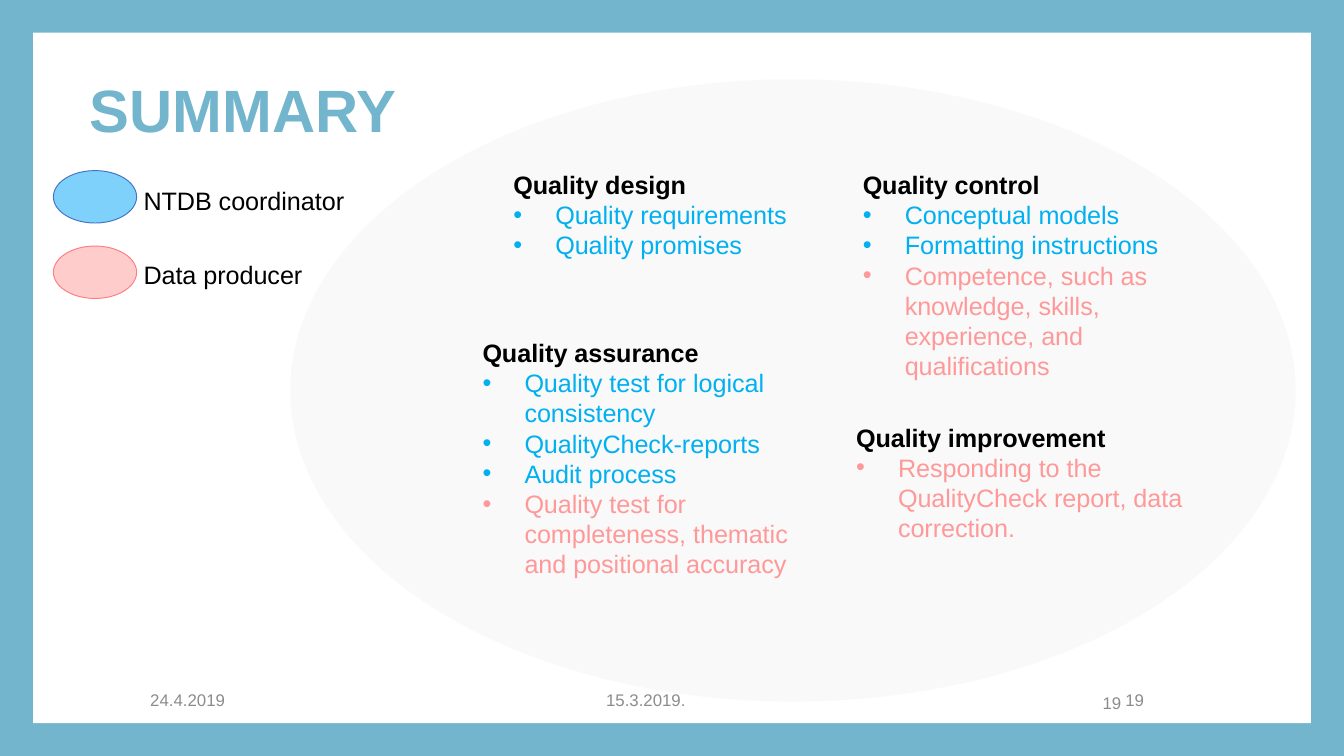
from dataclasses import dataclass
from typing import Any

import pptx
import pptx.dml.color
import pptx.enum.shapes
import pptx.enum.text
import pptx.oxml.ns
import pptx.util
from lxml import etree

Pt = pptx.util.Pt
ALIGN = pptx.enum.text.PP_ALIGN
ANCHOR = pptx.enum.text.MSO_ANCHOR
PRESET = pptx.enum.shapes.MSO_SHAPE

FONT = "Arial"
TEAL, WHITE, BLACK, GREY = "72B5CC", "FFFFFF", "000000", "8C8C8C"
COORDINATOR, PRODUCER = "00B0F0", "FF9999"
BODY_SIZE = 13.5
BULLET_INDENT = 22.5


@dataclass(frozen=True)
class Box:
    left: float
    top: float
    width: float
    height: float


@dataclass(frozen=True)
class QualityList:
    heading: str
    box: Box
    coordinator_tasks: tuple[str, ...] = ()
    producer_tasks: tuple[str, ...] = ()


@dataclass(frozen=True)
class Role:
    label: str
    fill: str
    outline: str
    oval_top: float
    label_box: Box


@dataclass(frozen=True)
class Footer:
    text: str
    box: Box
    alignment: Any


QUALITY_LISTS = (
    QualityList("Quality design", Box(267.8, 87.1, 195.8, 56.2),
                ("Quality requirements", "Quality promises")),
    QualityList("Quality control", Box(455, 87.1, 212.4, 138.2),
                ("Conceptual models", "Formatting instructions"),
                ("Competence, such as knowledge, skills, experience, and qualifications",)),
    QualityList("Quality assurance", Box(251.3, 177.1, 195.8, 170.6),
                ("Quality test for logical consistency", "QualityCheck-reports", "Audit process"),
                ("Quality test for completeness, thematic and positional accuracy",)),
    QualityList("Quality improvement", Box(451.4, 222.5, 195.8, 89.3),
                producer_tasks=("Responding to the QualityCheck report, data correction.",)),
)

ROLES = (
    Role("NTDB coordinator", "7ED1FA", "4472C4", 91.4, Box(69.8, 95.8, 154.8, 23.8)),
    Role("Data producer", "FFCCCC", "FF7C80", 131.8, Box(69.8, 135.4, 123.1, 23.8)),
)

FOOTERS = (
    Footer("15.3.2019.", Box(247.7, 364.3, 196.6, 21.6), ALIGN.CENTER),
    Footer("19", Box(457.9, 364.3, 162, 21.6), ALIGN.RIGHT),
    Footer("24.4.2019", Box(73.4, 364.3, 162, 21.6), ALIGN.LEFT),
    Footer("19", Box(457.9, 366.5, 149.8, 20.2), ALIGN.RIGHT),
)


def rgb(value: str) -> pptx.dml.color.RGBColor:
    return pptx.dml.color.RGBColor.from_string(value)


def apply(target: Any, formats: dict[str, Any]) -> None:
    for name, value in formats.items():
        setattr(target, name, value)


def corners(box: Box) -> tuple[Any, ...]:
    return Pt(box.left), Pt(box.top), Pt(box.width), Pt(box.height)


def place(shape: Any, box: Box) -> None:
    apply(shape, dict(zip(("left", "top", "width", "height"), corners(box))))


def set_frame(frame: Any, anchor: Any) -> None:
    apply(frame, {
        "word_wrap": True,
        "auto_size": pptx.enum.text.MSO_AUTO_SIZE.NONE,
        "vertical_anchor": anchor,
    })


def write(paragraph: Any, text: str, color: str, size: float = BODY_SIZE,
          bold: bool = False, alignment: Any = ALIGN.LEFT, spacing: float = 1.0) -> None:
    apply(paragraph, {"alignment": alignment, "line_spacing": spacing,
                      "space_before": Pt(0), "space_after": Pt(0)})
    run = paragraph.add_run()
    run.text = text
    apply(run.font, {"name": FONT, "size": Pt(size), "bold": bold})
    run.font.color.rgb = rgb(color)


def set_bullet(paragraph: Any, char: str = "") -> None:
    """Give the paragraph a hanging bullet, or none when char is empty."""
    indent = Pt(BULLET_INDENT) if char else 0
    properties = paragraph._p.get_or_add_pPr()
    properties.set("marL", str(indent))
    properties.set("indent", str(-indent))
    bullet = etree.SubElement(properties, pptx.oxml.ns.qn("a:buChar" if char else "a:buNone"))
    if char:
        bullet.set("char", char)


def add_filled(slide: Any, preset: Any, box: Box, fill: str, outline: str = "") -> Any:
    shape = slide.shapes.add_shape(preset, *corners(box))
    shape.shadow.inherit = False
    shape.fill.solid()
    shape.fill.fore_color.rgb = rgb(fill)
    if outline:
        shape.line.color.rgb = rgb(outline)
        shape.line.width = Pt(0.5)
    else:
        shape.line.fill.background()
    return shape


def add_label(slide: Any, text: str, box: Box, anchor: Any, **style: Any) -> None:
    frame = slide.shapes.add_textbox(*corners(box)).text_frame
    set_frame(frame, anchor)
    write(frame.paragraphs[0], text, **style)


def fill_quality_list(placeholder: Any, quality: QualityList) -> None:
    place(placeholder, quality.box)
    frame = placeholder.text_frame
    set_frame(frame, ANCHOR.TOP)
    write(frame.paragraphs[0], quality.heading, BLACK, bold=True)
    set_bullet(frame.paragraphs[0])
    for tasks, color in ((quality.coordinator_tasks, COORDINATOR),
                         (quality.producer_tasks, PRODUCER)):
        for task in tasks:
            paragraph = frame.add_paragraph()
            write(paragraph, task, color)
            set_bullet(paragraph, "•")


def main() -> None:
    presentation = pptx.Presentation()
    apply(presentation, {"slide_width": Pt(720), "slide_height": Pt(405)})
    comparison_layout = presentation.slide_layouts[4]
    slide = presentation.slides.add_slide(comparison_layout)
    slide.background.fill.solid()
    slide.background.fill.fore_color.rgb = rgb(TEAL)

    panel = add_filled(slide, PRESET.RECTANGLE, Box(17.7, 17.5, 684.6, 370), WHITE)
    backdrop = add_filled(slide, PRESET.OVAL, Box(155.5, 42.5, 538.6, 333.4), "F9F9F9")
    # The first two children of the shape tree are its own properties.
    for depth, surface in enumerate((panel, backdrop), start=2):
        surface.element.getparent().insert(depth, surface.element)

    title = slide.shapes.title
    place(title, Box(41, 21.6, 596.9, 78.5))
    set_frame(title.text_frame, ANCHOR.MIDDLE)
    write(title.text_frame.paragraphs[0], "SUMMARY", TEAL, size=32, bold=True, spacing=0.9)

    bodies = [p for p in slide.placeholders if p.placeholder_format.idx in (1, 2, 3, 4)]
    for body, quality in zip(bodies, QUALITY_LISTS):
        fill_quality_list(body, quality)

    for role in ROLES:
        add_filled(slide, PRESET.OVAL, Box(28.6, role.oval_top, 44.6, 28.1),
                   role.fill, role.outline)
        add_label(slide, role.label, role.label_box, ANCHOR.TOP, color=BLACK)

    for footer in FOOTERS:
        add_label(slide, footer.text, footer.box, ANCHOR.MIDDLE,
                  color=GREY, size=9, alignment=footer.alignment)

    presentation.save("out.pptx")


if __name__ == "__main__":
    main()
